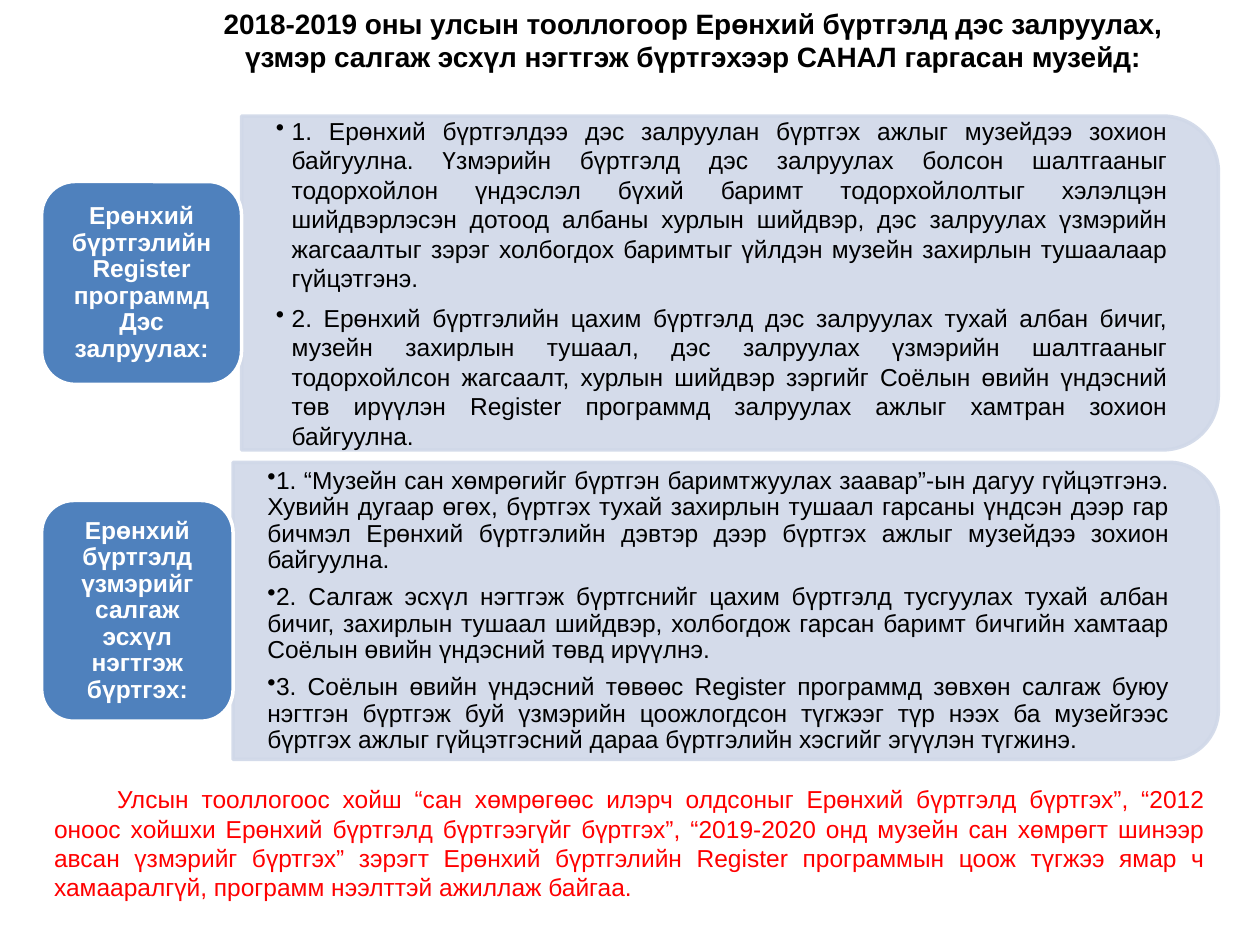
from dataclasses import dataclass

from lxml import etree
from pptx import Presentation
from pptx.dml.color import RGBColor
from pptx.enum.shapes import MSO_SHAPE
from pptx.enum.text import MSO_ANCHOR, PP_ALIGN
from pptx.oxml.ns import qn
from pptx.util import Cm, Pt

ROUND = MSO_SHAPE.ROUNDED_RECTANGLE
ROUND_TOP = MSO_SHAPE.ROUND_2_SAME_RECTANGLE
TOP, MIDDLE = MSO_ANCHOR.TOP, MSO_ANCHOR.MIDDLE
CENTER, JUSTIFY = PP_ALIGN.CENTER, PP_ALIGN.JUSTIFY

COLORS = {
    "panel": "D0D8E8",
    "label": "4F81BD",
    "white": "FFFFFF",
    "black": "000000",
    "red": "FF0000",
}
FONT = "Arial"
LABEL_LEFT = 0.84
CORNER_INSET = 0.0488


@dataclass
class Box:
    left: float
    top: float
    width: float
    height: float

    def inset(self, dx: float, dy: float) -> "Box":
        return Box(self.left + dx, self.top + dy, self.width - 2 * dx, self.height - 2 * dy)

    def lengths(self) -> list:
        return [Cm(v) for v in (self.left, self.top, self.width, self.height)]


@dataclass
class Style:
    size: float = 14
    color: str = "black"
    bold: bool = False
    align: int = JUSTIFY
    anchor: int = MIDDLE
    margins: tuple = (0.25, 0.13)
    spacing: float = 1.0
    after: float = 0
    hanging: float = 0
    first_line: float = 0
    bullet: bool = False


@dataclass
class Section:
    label: str
    label_height: float
    panel: Box
    items: list
    spacing: float
    hanging: float


SECTIONS = [
    Section(
        "Ерөнхий бүртгэлийн Register программд Дэс залруулах:",
        4.09,
        Box(4.87, 2.34, 19.69, 6.73),
        [
            "1. Ерөнхий бүртгэлдээ дэс залруулан бүртгэх ажлыг музейдээ зохион байгуулна. "
            "Үзмэрийн бүртгэлд дэс залруулах болсон шалтгааныг тодорхойлон үндэслэл бүхий "
            "баримт тодорхойлолтыг хэлэлцэн шийдвэрлэсэн дотоод албаны хурлын шийдвэр, дэс "
            "залруулах үзмэрийн жагсаалтыг зэрэг холбогдох баримтыг үйлдэн музейн захирлын "
            "тушаалаар гүйцэтгэнэ.",
            "2. Ерөнхий бүртгэлийн цахим бүртгэлд дэс залруулах тухай албан бичиг, музейн "
            "захирлын тушаал, дэс залруулах үзмэрийн шалтгааныг тодорхойлсон жагсаалт, "
            "хурлын шийдвэр зэргийг Соёлын өвийн үндэсний төв ирүүлэн Register программд "
            "залруулах ажлыг хамтран зохион байгуулна.",
        ],
        1.0,
        0.32,
    ),
    Section(
        "Ерөнхий бүртгэлд үзмэрийг салгаж эсхүл нэгтгэж бүртгэх:",
        4.45,
        Box(4.7, 9.32, 19.86, 5.99),
        [
            "1. “Музейн сан хөмрөгийг бүртгэн баримтжуулах заавар”-ын дагуу гүйцэтгэнэ. "
            "Хувийн дугаар өгөх, бүртгэх тухай захирлын тушаал гарсаны үндсэн дээр гар "
            "бичмэл Ерөнхий бүртгэлийн дэвтэр дээр бүртгэх ажлыг музейдээ зохион байгуулна.",
            "2. Салгаж эсхүл нэгтгэж бүртгснийг цахим бүртгэлд тусгуулах тухай албан бичиг, "
            "захирлын тушаал шийдвэр, холбогдож гарсан баримт бичгийн хамтаар Соёлын өвийн "
            "үндэсний төвд ирүүлнэ.",
            "3. Соёлын өвийн үндэсний төвөөс Register программд зөвхөн салгаж буюу нэгтгэн "
            "бүртгэж буй үзмэрийн цоожлогдсон түгжээг түр нээх ба музейгээс бүртгэх ажлыг "
            "гүйцэтгэсний дараа бүртгэлийн хэсгийг эгүүлэн түгжинэ.",
        ],
        0.9,
        0,
    ),
]

TITLE = (
    "2018-2019 оны улсын тооллогоор Ерөнхий бүртгэлд дэс залруулах, "
    "үзмэр салгаж эсхүл нэгтгэж бүртгэхээр САНАЛ гаргасан музейд:"
)
NOTE = (
    "Улсын тооллогоос хойш “сан хөмрөгөөс илэрч олдсоныг Ерөнхий бүртгэлд бүртгэх”, "
    "“2012 оноос хойшхи Ерөнхий бүртгэлд бүртгээгүйг бүртгэх”, “2019-2020 онд музейн "
    "сан хөмрөгт шинээр авсан үзмэрийг бүртгэх” зэрэгт Ерөнхий бүртгэлийн Register "
    "программын цоож түгжээ ямар ч хамааралгүй, программ нээлттэй ажиллаж байгаа."
)


def rgb(name: str) -> RGBColor:
    return RGBColor.from_string(COLORS[name])


def add_text(s, box: Box, texts: list, style: Style) -> None:
    tf = s.shapes.add_textbox(*box.lengths()).text_frame
    tf.word_wrap = True
    tf.vertical_anchor = style.anchor
    tf.margin_left = tf.margin_right = Cm(style.margins[0])
    tf.margin_top = tf.margin_bottom = Cm(style.margins[1])
    tf.text = "\n".join(texts)
    for p in tf.paragraphs:
        pPr = p._p.get_or_add_pPr()
        pPr.set("marL", str(Cm(style.hanging)))
        pPr.set("indent", str(Cm(style.first_line - style.hanging)))
        if style.bullet:
            etree.SubElement(pPr, qn("a:buChar")).set("char", "•")
        p.alignment = style.align
        p.line_spacing = style.spacing
        p.space_after = Pt(style.after)
        for r in p.runs:
            r.font.name = FONT
            r.font.size = Pt(style.size)
            r.font.bold = style.bold
            r.font.color.rgb = rgb(style.color)


def add_block(s, kind: int, box: Box, fill: str, line: str):
    sp = s.shapes.add_shape(kind, *box.lengths())
    sp.shadow.inherit = False
    sp.fill.solid()
    sp.fill.fore_color.rgb = rgb(fill)
    sp.line.color.rgb = rgb(line)
    sp.line.width = Pt(2)
    return sp


def add_panel(s, box: Box) -> None:
    shift = (box.width - box.height) / 2
    sp = add_block(s, ROUND_TOP, box.inset(shift, -shift), "panel", "panel")
    sp.rotation = 90
    for color in sp._element.spPr.iter(qn("a:srgbClr")):
        etree.SubElement(color, qn("a:alpha")).set("val", "90000")


def add_section(s, section: Section) -> None:
    panel = section.panel
    add_panel(s, panel)
    inset = CORNER_INSET * panel.height
    body = Box(panel.left, panel.top + inset, panel.width - inset, panel.height - 2 * inset)
    add_text(s, body, section.items, Style(
        margins=(0.69, 0.36), spacing=section.spacing, after=6,
        hanging=section.hanging, bullet=True))

    label = Box(LABEL_LEFT, panel.top + (panel.height - section.label_height) / 2,
                panel.left - LABEL_LEFT, section.label_height)
    add_block(s, ROUND, label, "label", "white")
    inset = CORNER_INSET * label.width
    add_text(s, label.inset(inset, inset), [section.label], Style(
        color="white", bold=True, align=CENTER, margins=(0.15, 0.08), spacing=0.9))


def main() -> None:
    prs = Presentation()
    prs.slide_width, prs.slide_height = Cm(25.4), Cm(19.05)
    s = prs.slides.add_slide(prs.slide_layouts[6])
    for section in SECTIONS:
        add_section(s, section)
    add_text(s, Box(3.39, 0, 21.17, 1.63), [TITLE],
             Style(size=16, bold=True, align=CENTER, anchor=TOP))
    add_text(s, Box(0.84, 15.68, 23.71, 2.82), [NOTE],
             Style(color="red", anchor=TOP, after=6, first_line=1.27))
    prs.save("out.pptx")


if __name__ == "__main__":
    main()
